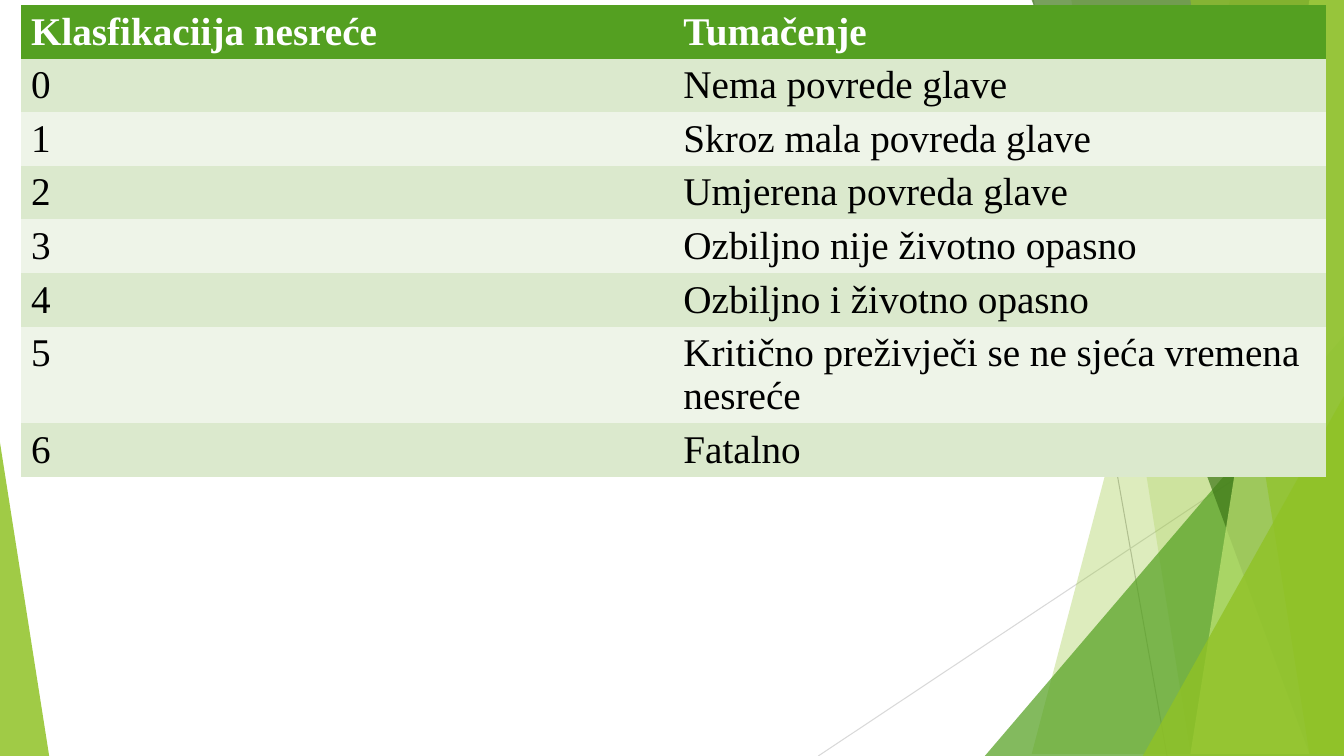
"""Build a slide with a table of head injury classes over green facets."""
from dataclasses import dataclass

from lxml import etree
from pptx import Presentation
from pptx.dml.color import RGBColor
from pptx.enum.shapes import MSO_CONNECTOR, MSO_SHAPE
from pptx.oxml.ns import qn
from pptx.util import Cm, Pt

LINE = MSO_CONNECTOR.STRAIGHT
PEAK = MSO_SHAPE.ISOSCELES_TRIANGLE
PLAIN = "{2D5ABB26-0587-4C30-8999-92F81FD0307C}"
WIDE, HIGH = 33.87, 19.05


@dataclass(frozen=True)
class Theme:
    font: str = "Times New Roman"
    size: float = 28
    rule: float = 0.75
    lime: str = "90C226"
    green: str = "54A021"
    dark: str = "3F7819"
    pale: str = "C0E474"
    gray: str = "BFBFBF"
    mist: str = "D9D9D9"
    white: str = "FFFFFF"
    black: str = "000000"
    odd: str = "DBE9CD"
    even: str = "EEF4E8"


class Deck:
    def __init__(self, theme):
        self.theme = theme
        self.prs = Presentation()
        self.prs.slide_width, self.prs.slide_height = Cm(WIDE), Cm(HIGH)
        self.slide = self.prs.slides.add_slide(self.prs.slide_layouts[6])
        self.shapes = self.slide.shapes

    def line(self, x1, y1, x2, y2, color):
        link = self.shapes.add_connector(LINE, Cm(x1), Cm(y1), Cm(x2), Cm(y2))
        link.line.color.rgb = RGBColor.from_string(color)
        link.line.width = Pt(self.theme.rule)
        etree.SubElement(link.element.spPr, qn("a:effectLst"))

    def paint(self, shape, color, alpha):
        shape.shadow.inherit = False
        shape.line.fill.background()
        shape.fill.solid()
        shape.fill.fore_color.rgb = RGBColor.from_string(color)
        tint = next(shape.element.iter(qn("a:srgbClr")))
        etree.SubElement(tint, qn("a:alpha"), val=str(alpha * 1000))

    def band(self, top, foot, color, alpha):
        pen = self.shapes.build_freeform(top, 0, scale=Cm(1))
        pen.add_line_segments([(WIDE, 0), (WIDE, HIGH), (foot, HIGH)])
        self.paint(pen.convert_to_shape(), color, alpha)

    def peak(self, left, top, width, apex, color, alpha):
        shape = self.shapes.add_shape(
            PEAK, Cm(left), Cm(top), Cm(width), Cm(HIGH - top))
        shape.adjustments[0] = apex
        self.paint(shape, color, alpha)

    def table(self, left, top, width, rows, heights):
        theme = self.theme
        frame = self.shapes.add_table(
            len(rows), len(rows[0]), Cm(left), Cm(top), Cm(width), Cm(sum(heights)))
        next(frame.element.iter(qn("a:tableStyleId"))).text = PLAIN
        grid = frame.table
        for i, (row, high) in enumerate(zip(rows, heights)):
            grid.rows[i].height = Cm(high)
            fill = theme.odd if i % 2 else theme.even
            for j, text in enumerate(row):
                cell = grid.cell(i, j)
                cell.text = text
                cell.fill.solid()
                cell.fill.fore_color.rgb = RGBColor.from_string(
                    fill if i else theme.green)
                font = cell.text_frame.paragraphs[0].font
                font.name, font.size, font.bold = theme.font, Pt(theme.size), i == 0
                font.color.rgb = RGBColor.from_string(
                    theme.black if i else theme.white)


def main():
    theme = Theme()
    deck = Deck(theme)
    deck.line(26.04, 0, 29.41, HIGH, theme.gray)
    deck.line(WIDE, 10.24, 20.62, HIGH, theme.mist)
    deck.band(31.19, 25.5, theme.lime, 30)
    deck.band(26.67, 30.05, theme.lime, 20)
    deck.peak(24.82, 8.46, 9.05, 1, theme.green, 72)
    deck.band(25.93, 32.79, theme.dark, 70)
    deck.band(33.1, 30.28, theme.pale, 70)
    deck.band(30.38, 33.48, theme.lime, 65)
    deck.peak(28.8, 9.98, 5.07, 1, theme.lime, 80)
    deck.peak(0, 11.15, 1.24, 0, theme.lime, 85)

    notes = [
        "Nema povrede glave",
        "Skroz mala povreda glave",
        "Umjerena povreda glave",
        "Ozbiljno nije životno opasno",
        "Ozbiljno i životno opasno",
        "Kritično preživječi se ne sjeća vremena nesreće",
        "Fatalno",
    ]
    rows = [("Klasfikaciija nesreće", "Tumačenje")]
    rows += [(str(i), note) for i, note in enumerate(notes)]
    deck.table(0.53, 0.13, 32.88, rows, [1.35] * 6 + [2.44, 1.35])
    deck.prs.save("out.pptx")


if __name__ == "__main__":
    main()
